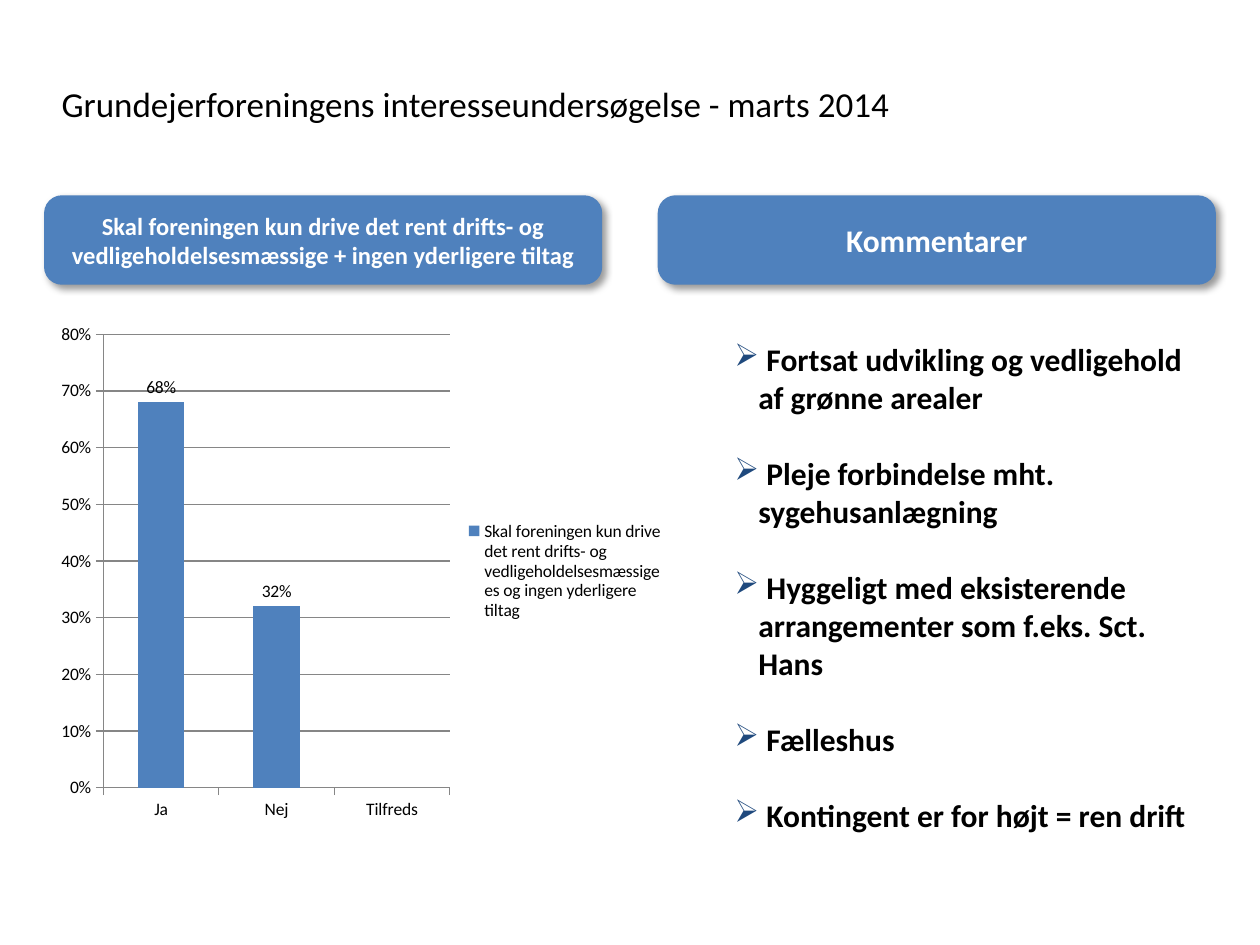
from pptx import Presentation
from pptx.chart.data import CategoryChartData
from pptx.dml.color import RGBColor
from pptx.enum.chart import XL_CHART_TYPE, XL_LABEL_POSITION, XL_LEGEND_POSITION, XL_TICK_MARK
from pptx.enum.shapes import MSO_SHAPE
from pptx.enum.text import MSO_ANCHOR, PP_ALIGN
from pptx.oxml import parse_xml
from pptx.oxml.ns import nsdecls
from pptx.util import Inches, Pt

COLUMNS = XL_CHART_TYPE.COLUMN_CLUSTERED
OUTSIDE_END = XL_LABEL_POSITION.OUTSIDE_END
LEGEND_RIGHT = XL_LEGEND_POSITION.RIGHT
TICK_OUT = XL_TICK_MARK.OUTSIDE
ROUNDED = MSO_SHAPE.ROUNDED_RECTANGLE
MIDDLE, TOP = MSO_ANCHOR.MIDDLE, MSO_ANCHOR.TOP
LEFT, CENTER = PP_ALIGN.LEFT, PP_ALIGN.CENTER

FONT = "Calibri"
BLACK, WHITE, BLUE, NAVY, GRAY = "000000", "FFFFFF", "4F81BD", "1F497D", "868686"

COMMENTS = [
    "Fortsat udvikling og vedligehold af grønne arealer",
    "Pleje forbindelse mht. sygehusanlægning",
    "Hyggeligt med eksisterende arrangementer som f.eks. Sct. Hans",
    "Fælleshus",
    "Kontingent er for højt = ren drift",
]
HEADINGS = [
    ("Skal foreningen kun drive det rent drifts- og "
     "vedligeholdelsesmæssige + ingen yderligere tiltag", 0.35, 14),
    ("Kommentarer", 5.22, 18),
]
SERIES_NAME = ("Skal foreningen kun drive det rent drifts- og "
               "vedligeholdelsesmæssige es og ingen yderligere tiltag")


def color(value):
    return RGBColor.from_string(value)


def style_font(font, size, fill=BLACK, bold=False):
    font.name, font.size, font.bold = FONT, Pt(size), bold
    font.color.rgb = color(fill)


def write(para, text, size=18, fill=BLACK, bold=False, align=LEFT, before=0):
    para.alignment = align
    para.space_before = Pt(before)
    span = para.add_run()
    span.text = text
    style_font(span.font, size, fill, bold)


def add_box(page, left, top, width, height, anchor=TOP):
    box = page.shapes.add_textbox(Inches(left), Inches(top), Inches(width), Inches(height))
    box.text_frame.word_wrap = True
    box.text_frame.vertical_anchor = anchor
    return box.text_frame


def add_bullet(para, symbol, fill, indent):
    properties = para._p.get_or_add_pPr()
    properties.set("marL", str(Inches(indent)))
    properties.set("indent", str(-Inches(indent)))
    properties.append(parse_xml(
        f'<a:buClr {nsdecls("a")}><a:srgbClr val="{fill}"/></a:buClr>'))
    properties.append(parse_xml(f'<a:buChar {nsdecls("a")} char="{symbol}"/>'))


def add_comments(page):
    frame = add_box(page, 5.73, 2.65, 3.92, 4.04)
    for index, comment in enumerate(COMMENTS):
        para = frame.add_paragraph() if index else frame.paragraphs[0]
        write(para, " " + comment, bold=True, before=22 if index else 0)
        add_bullet(para, "➢", NAVY, 0.19)


def add_shadow(shape):
    shape.shadow.inherit = False
    effects = shape._element.spPr.find("{*}effectLst")
    effects.append(parse_xml(
        f'<a:outerShdw {nsdecls("a")} blurRad="{Pt(4)}" dist="{Pt(3)}" dir="2700000" '
        f'algn="tl" rotWithShape="0"><a:srgbClr val="{BLACK}">'
        '<a:alpha val="40000"/></a:srgbClr></a:outerShdw>'))


def add_heading(page, text, left, size):
    shape = page.shapes.add_shape(
        ROUNDED, Inches(left), Inches(1.55), Inches(4.43), Inches(0.71))
    shape.adjustments[0] = 0.2
    shape.fill.solid()
    shape.fill.fore_color.rgb = color(BLUE)
    shape.line.fill.background()
    add_shadow(shape)
    frame = shape.text_frame
    frame.word_wrap = True
    frame.vertical_anchor = MIDDLE
    frame.margin_left = frame.margin_right = Inches(0.04)
    frame.margin_top = frame.margin_bottom = Inches(0.04)
    write(frame.paragraphs[0], text, size=size, fill=WHITE, bold=True, align=CENTER)


def style_axis(axis):
    axis.major_tick_mark = TICK_OUT
    axis.format.line.color.rgb = color(GRAY)


def place_plot(chart, x, y, w, h):
    sizes = "".join(f'<c:{key} val="{value}"/>'
                    for key, value in (("x", x), ("y", y), ("w", w), ("h", h)))
    chart._chartSpace.chart.plotArea.insert(0, parse_xml(
        f'<c:layout {nsdecls("c")}><c:manualLayout><c:layoutTarget val="inner"/>'
        f'<c:xMode val="edge"/><c:yMode val="edge"/>{sizes}</c:manualLayout></c:layout>'))


def add_survey_chart(page):
    data = CategoryChartData(number_format="0%")
    data.categories = ["Ja", "Nej", "Tilfreds"]
    data.add_series(SERIES_NAME, [0.68, 0.32, None])
    chart = page.shapes.add_chart(
        COLUMNS, Inches(0.37), Inches(2.49), Inches(5), Inches(4.09), data).chart
    style_font(chart.font, 10)
    chart.has_title = False
    chart.has_legend = True
    chart.legend.position = LEGEND_RIGHT
    chart.legend.include_in_layout = False
    style_axis(chart.category_axis)
    values = chart.value_axis
    style_axis(values)
    values.minimum_scale, values.maximum_scale, values.major_unit = 0, 0.8, 0.1
    values.major_gridlines.format.line.color.rgb = color(GRAY)
    values.tick_labels.number_format = "0%"
    values.tick_labels.number_format_is_linked = False
    plot = chart.plots[0]
    plot.vary_by_categories = False
    plot.gap_width = 150
    plot.has_data_labels = True
    labels = plot.data_labels
    labels.show_value = True
    labels.number_format = "0%"
    labels.number_format_is_linked = False
    labels.position = OUTSIDE_END
    fill = plot.series[0].format.fill
    fill.solid()
    fill.fore_color.rgb = color(BLUE)
    place_plot(chart, 0.09, 0.04, 0.55, 0.88)


def main():
    deck = Presentation()
    deck.slide_width, deck.slide_height = Inches(10), Inches(7.5)
    page = deck.slides.add_slide(deck.slide_layouts[6])
    title = add_box(page, 0.39, 0.37, 8.54, 0.9, anchor=MIDDLE)
    write(title.paragraphs[0], "Grundejerforeningens interesseundersøgelse - marts 2014", size=20)
    add_comments(page)
    for text, left, size in HEADINGS:
        add_heading(page, text, left, size)
    add_survey_chart(page)
    deck.save("out.pptx")


if __name__ == "__main__":
    main()
